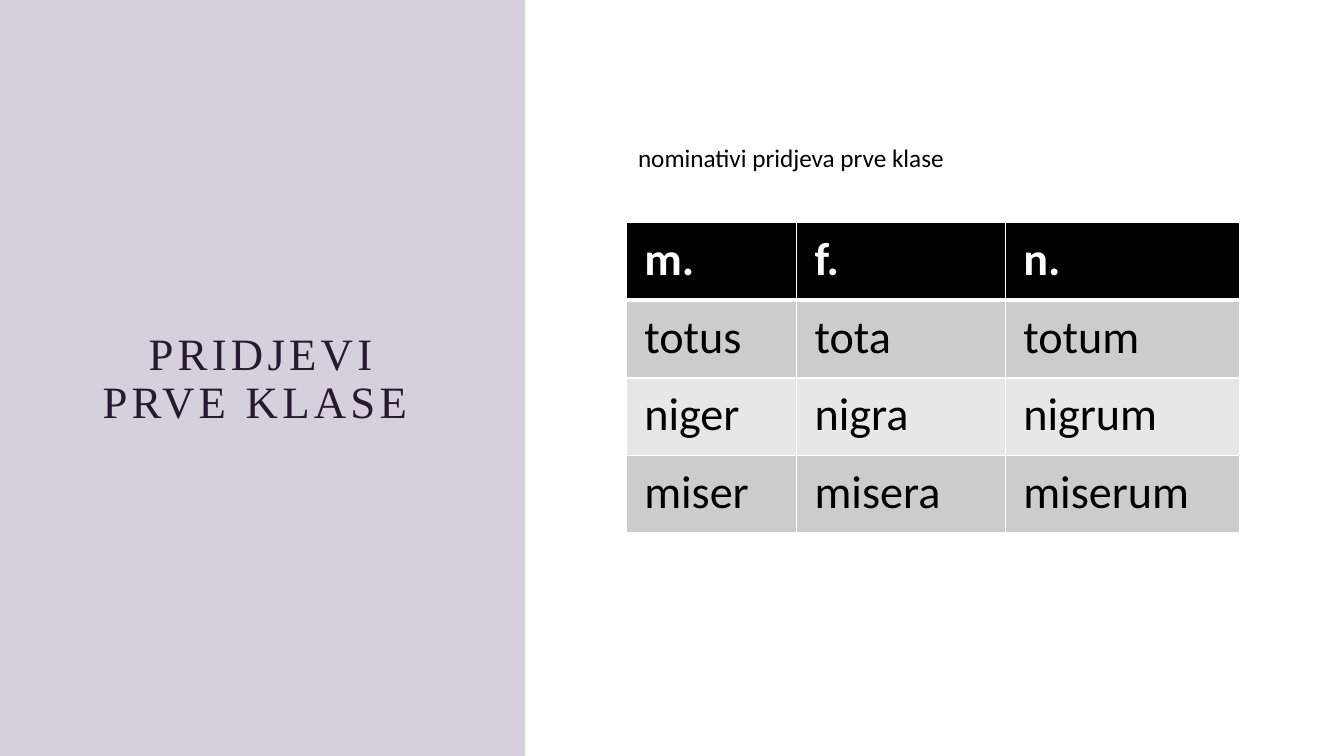
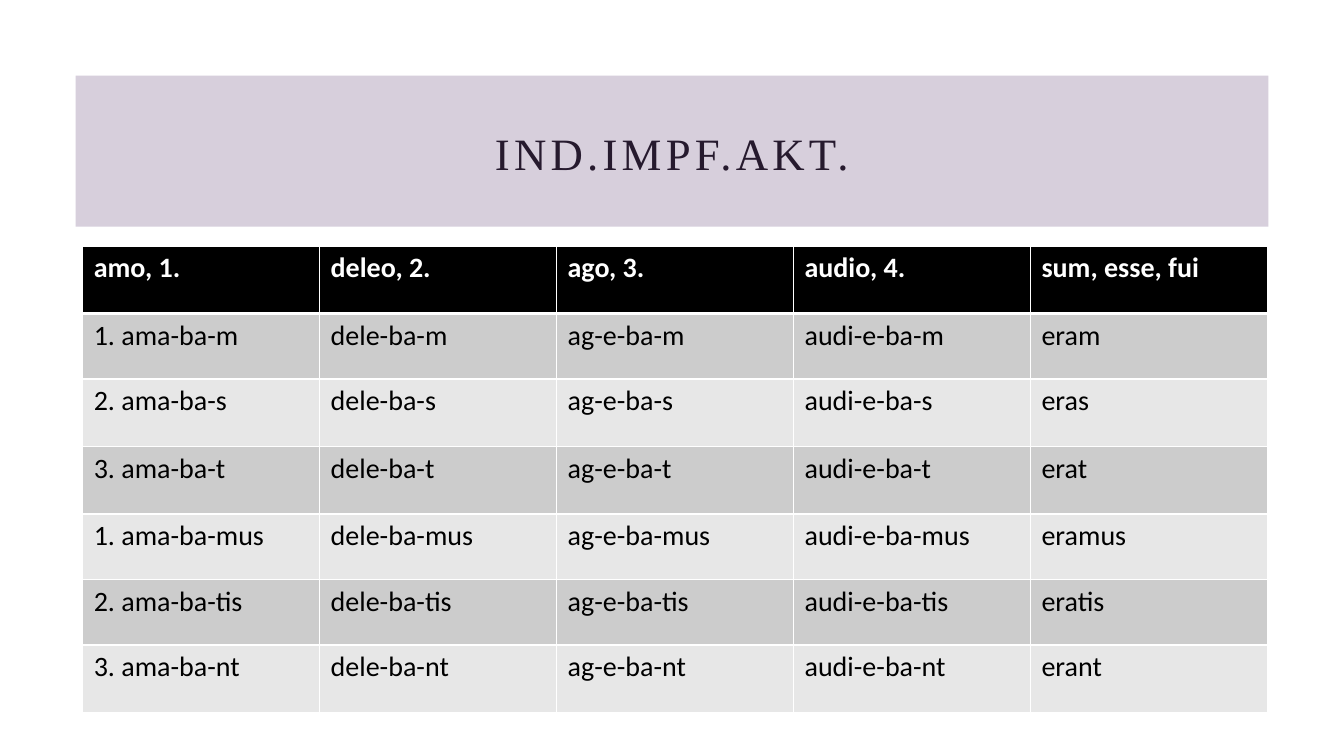
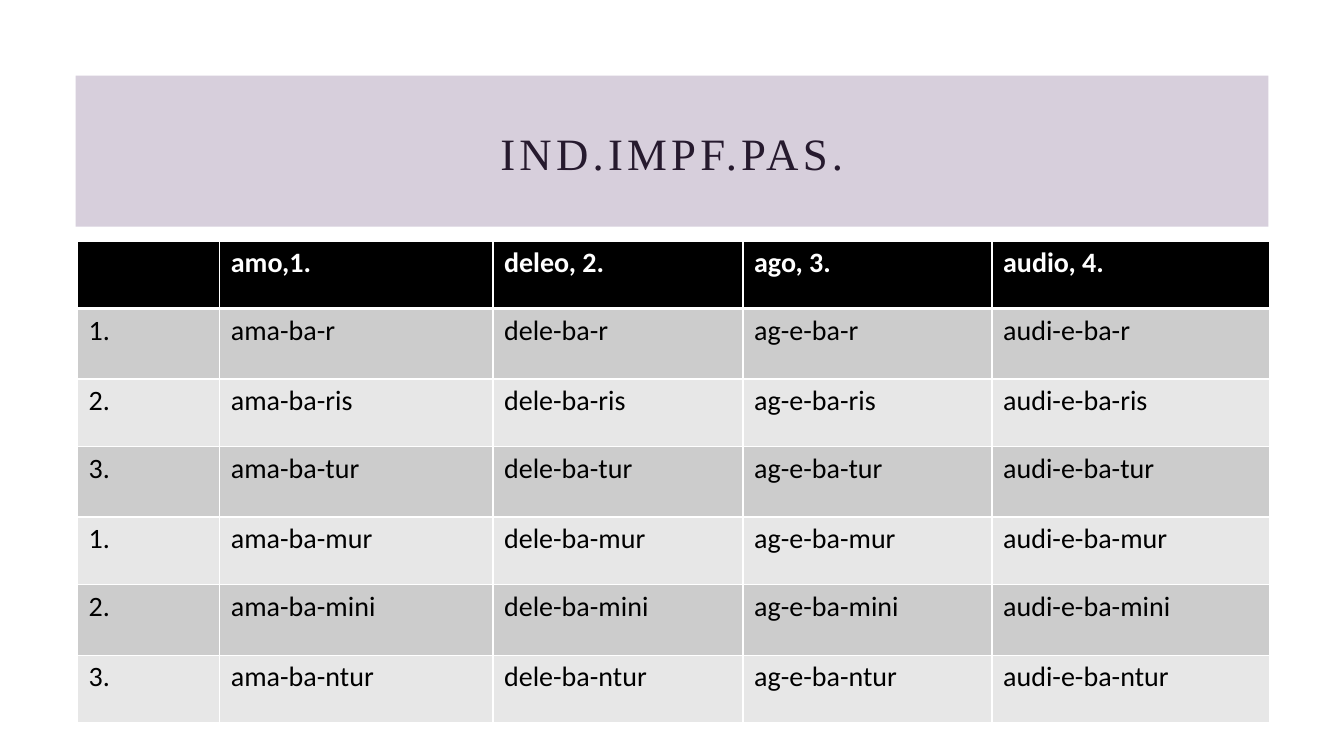
import pptx
import pptx.dml.color
import pptx.enum.shapes
import pptx.enum.text
import pptx.oxml
import pptx.oxml.ns
import pptx.util
from pptx.util import Inches, Pt

COLORS = {
    "band": "604274",
    "title": "261A2E",
    "head": "000000",
    "text": "000000",
    "odd": "CCCCCC",
    "even": "E7E7E7",
    "white": "FFFFFF",
}
BODY_FONT = "Calibri"
TITLE_FONT = "Times New Roman"
BAND_OPACITY = 25

PERSONS = ["1.", "2.", "3."] * 2
STEMS = ["ama-ba-", "dele-ba-", "ag-e-ba-", "audi-e-ba-"]
ACTIVE = ["m", "s", "t", "mus", "tis", "nt"]
PASSIVE = ["r", "ris", "tur", "mur", "mini", "ntur"]
ESSE = ["eram", "eras", "erat", "eramus", "eratis", "erant"]

ADJECTIVES = [
    ["m.", "f.", "n."],
    ["totus", "tota", "totum"],
    ["niger", "nigra", "nigrum"],
    ["miser", "misera", "miserum"],
]
ACTIVE_ROWS = [["amo, 1.", "deleo, 2.", "ago, 3.", "audio, 4.", "sum, esse, fui"]]
for person, ending, form in zip(PERSONS, ACTIVE, ESSE):
    first, *others = [stem + ending for stem in STEMS]
    ACTIVE_ROWS.append([f"{person} {first}", *others, form])
PASSIVE_ROWS = [["", "amo,1.", "deleo, 2.", "ago, 3.", "audio, 4."]]
for person, ending in zip(PERSONS, PASSIVE):
    PASSIVE_ROWS.append([person] + [stem + ending for stem in STEMS])

SIDE_BAND = {"band": (0, 0, 5.21, 7.5), "title_box": (0.75, 0.77, 3.71, 6)}
TOP_BAND = {"band": (0.75, 0.75, 11.83, 1.5), "title_box": (1.53, 1.04, 10.27, 1.02)}

SLIDES = [
    {
        "title": "PRIDJEVI PRVE KLASE ", "layout": SIDE_BAND,
        "rows": ADJECTIVES, "at": (6.21, 2.21), "size": 33, "insets": (0.18, 0.09),
        "widths": [1.69, 2.07, 2.33], "heights": [0.77] * 4,
        "caption": ("nominativi pridjeva prve klase", (6.23, 1.36, 5.26, 0.4)),
    },
    {
        "title": "IND.IMPF.AKT.", "layout": TOP_BAND,
        "rows": ACTIVE_ROWS, "at": (0.82, 2.44), "size": 20, "insets": (0.11, 0.05),
        "widths": [2.35] * 5, "heights": [0.67, 0.65, 0.67, 0.67, 0.65, 0.65, 0.67],
    },
    {
        "title": "IND.IMPF.PAS.", "layout": TOP_BAND,
        "rows": PASSIVE_ROWS, "at": (0.77, 2.39), "size": 20, "insets": (0.11, 0.05),
        "widths": [1.41, 2.71, 2.48, 2.47, 2.75], "heights": [0.67, 0.7] * 3 + [0.67],
    },
]


def rgb(name):
    return pptx.dml.color.RGBColor.from_string(COLORS[name])


def add_run(p, text, font, size, color, bold=False):
    r = p.add_run()
    r.text = text
    r.font.name = font
    r.font.size = Pt(size)
    r.font.bold = bold
    r.font.color.rgb = rgb(color)
    return r


def add_text_box(slide, box):
    tf = slide.shapes.add_textbox(*map(Inches, box)).text_frame
    tf.word_wrap = True
    return tf


def add_band(slide, box):
    sp = slide.shapes.add_shape(pptx.enum.shapes.MSO_SHAPE.RECTANGLE, *map(Inches, box))
    sp.shadow.inherit = False
    sp.line.fill.background()
    sp.fill.solid()
    sp.fill.fore_color.rgb = rgb("band")
    color = sp.fill._xPr.find(".//" + pptx.oxml.ns.qn("a:srgbClr"))
    pptx.oxml.ns.qn("a:alpha")
    alpha = color.makeelement(pptx.oxml.ns.qn("a:alpha"), {"val": str(BAND_OPACITY * 1000)})
    color.append(alpha)


def add_title(slide, text, box):
    tf = add_text_box(slide, box)
    tf.vertical_anchor = pptx.enum.text.MSO_ANCHOR.MIDDLE
    p = tf.paragraphs[0]
    p.alignment = pptx.enum.text.PP_ALIGN.CENTER
    p.line_spacing = 0.9
    r = add_run(p, text, TITLE_FONT, 32, "title")
    r.font._element.set("spc", "300")


def set_borders(cell, top, bottom):
    """Draw white cell borders; top and bottom are widths in points."""
    tc_pr = cell._tc.get_or_add_tcPr()
    for side, width in (("L", 1), ("R", 1), ("T", top), ("B", bottom)):
        tc_pr.append(pptx.oxml.parse_xml(
            f'<a:ln{side} {pptx.oxml.ns.nsdecls("a")} w="{Pt(width)}"><a:solidFill>'
            f'<a:srgbClr val="{COLORS["white"]}"/></a:solidFill></a:ln{side}>'))


def add_table(slide, rows, at, size, insets, widths, heights):
    box = (*at, sum(widths), sum(heights))
    table = slide.shapes.add_table(len(rows), len(widths), *map(Inches, box)).table
    for column, width in zip(table.columns, widths):
        column.width = Inches(width)
    for row, height in zip(table.rows, heights):
        row.height = Inches(height)
    for i, texts in enumerate(rows):
        head = i == 0
        fill = "head" if head else "odd" if i % 2 else "even"
        for j, text in enumerate(texts):
            cell = table.cell(i, j)
            cell.margin_left = cell.margin_right = Inches(insets[0])
            cell.margin_top = cell.margin_bottom = Inches(insets[1])
            set_borders(cell, top=3 if i == 1 else 1, bottom=3 if head else 1)
            cell.fill.solid()
            cell.fill.fore_color.rgb = rgb(fill)
            if text:
                add_run(cell.text_frame.paragraphs[0], text, BODY_FONT, size,
                        "white" if head else "text", bold=head)


def main():
    prs = pptx.Presentation()
    prs.slide_width, prs.slide_height = Inches(13.33), Inches(7.5)
    for data in SLIDES:
        slide = prs.slides.add_slide(prs.slide_layouts[6])
        add_band(slide, data["layout"]["band"])
        add_title(slide, data["title"], data["layout"]["title_box"])
        add_table(slide, data["rows"], data["at"], data["size"], data["insets"],
                  data["widths"], data["heights"])
        if "caption" in data:
            text, box = data["caption"]
            add_run(add_text_box(slide, box).paragraphs[0], text, BODY_FONT, 18, "text")
    prs.save("out.pptx")


if __name__ == "__main__":
    main()
